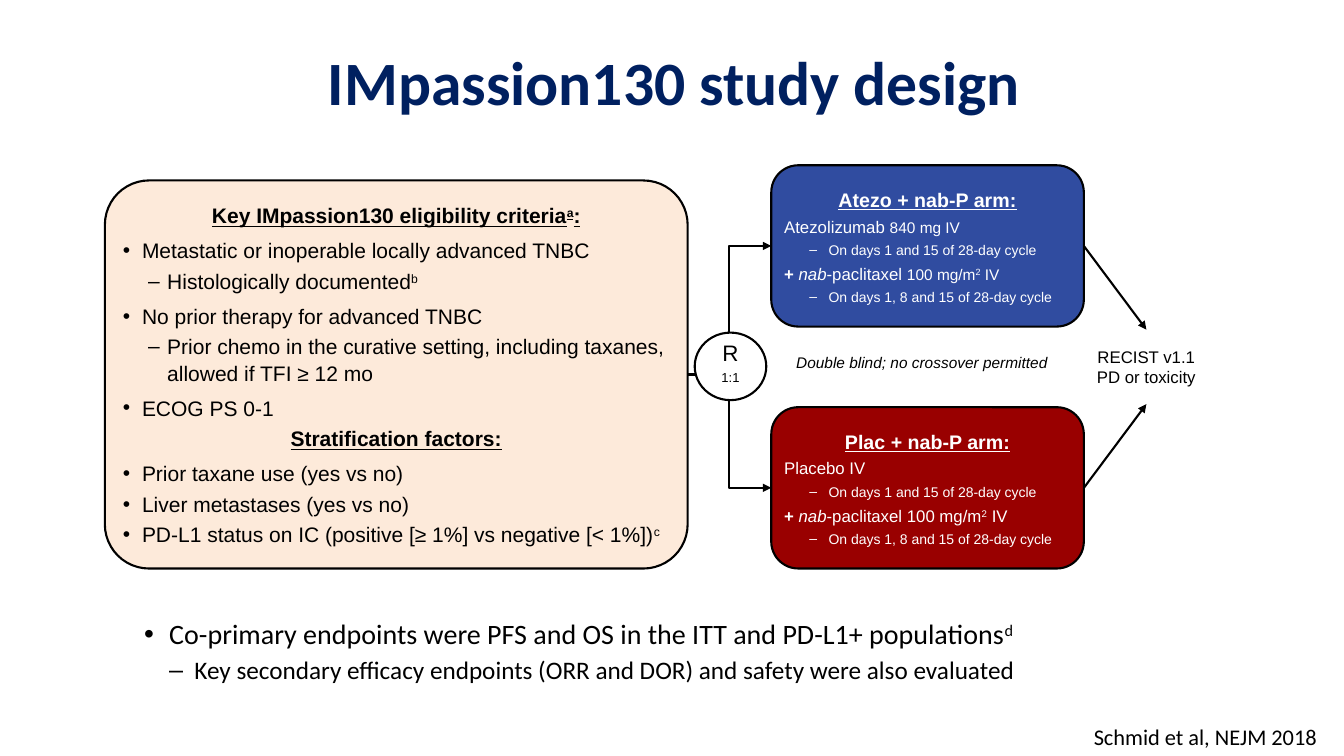
"""Builds the IMpassion130 study design slide."""
from lxml import etree
from pptx import Presentation
from pptx import util as u
from pptx.dml.color import RGBColor
from pptx.enum import shapes, text
from pptx.oxml.ns import qn

COLORS = {"black": "000000", "white": "FFFFFF", "navy": "002060",
          "peach": "FDEADA", "blue": "304CA0", "red": "990000"}
CENTER = text.PP_ALIGN.CENTER
MIDDLE = text.MSO_ANCHOR.MIDDLE
SHAPE = shapes.MSO_SHAPE


def span(words, **style):
    return words, style


def para(*spans, **layout):
    return spans, layout


def heading(*spans):
    return para(*spans, align=CENTER, before=3, after=3)


def bullet(*spans, indent=0.19, before=3):
    return para(*spans, mark="•", indent=(indent, -indent), before=before)


def dash(*spans, indent=(0.44, -0.19), after=3, mark="‒"):
    return para(*spans, mark=mark, indent=indent, before=3, after=after, level=1)


class StudySlide:
    def __init__(self, slide, line_width=1.5):
        self.slide = slide
        self.line_width = line_width

    def color(self, name):
        return RGBColor.from_string(COLORS[name])

    def put_text(self, shape, paragraphs, font="Arial", size=12, color="black",
                 anchor=text.MSO_ANCHOR.TOP, insets=None, wrap=True, spacing=None):
        frame = shape.text_frame
        frame.word_wrap = wrap
        frame.vertical_anchor = anchor
        if insets is not None:
            frame.margin_left = frame.margin_right = u.Inches(insets)
            frame.margin_top = frame.margin_bottom = u.Inches(insets)
        for i, (spans, layout) in enumerate(paragraphs):
            p = frame.paragraphs[0] if i == 0 else frame.add_paragraph()
            p.alignment = layout.get("align", text.PP_ALIGN.LEFT)
            p.level = layout.get("level", 0)
            p.space_before = u.Pt(layout.get("before", 0))
            p.space_after = u.Pt(layout.get("after", 0))
            if spacing:
                p.line_spacing = spacing
            if "mark" in layout:
                margin, first = layout["indent"]
                props = p._p.get_or_add_pPr()
                props.set("marL", str(u.Inches(margin)))
                props.set("indent", str(u.Inches(first)))
                etree.SubElement(props, qn("a:buFont"), typeface="Arial")
                etree.SubElement(props, qn("a:buChar"), char=layout["mark"])
            for words, style in spans:
                run = p.add_run()
                run.text = words
                run.font.name = font
                run.font.size = u.Pt(style.get("size", size))
                run.font.color.rgb = self.color(color)
                run.font.bold = style.get("bold", False)
                run.font.italic = style.get("italic", False)
                run.font.underline = style.get("underline", False)
                if style.get("sup"):
                    run.font._element.set("baseline", "30000")

    def textbox(self, place, paragraphs, **style):
        box = self.slide.shapes.add_textbox(*map(u.Inches, place))
        self.put_text(box, paragraphs, **style)

    def box(self, kind, place, paragraphs, fill=None, radius=None, insets=0.05, **style):
        shape = self.slide.shapes.add_shape(kind, *map(u.Inches, place))
        shape.shadow.inherit = False
        if radius:
            shape.adjustments[0] = radius
        if fill:
            shape.fill.solid()
            shape.fill.fore_color.rgb = self.color(fill)
            shape.line.color.rgb = self.color("black")
            shape.line.width = u.Pt(self.line_width)
        else:
            shape.fill.background()
            shape.line.fill.background()
        self.put_text(shape, paragraphs, anchor=MIDDLE, insets=insets, **style)
        return shape

    def arrow(self, kind, start, start_side, end, end_side):
        link = self.slide.shapes.add_connector(kind, 0, 0, 0, 0)
        link.begin_connect(start, start_side)
        link.end_connect(end, end_side)
        link.line.color.rgb = self.color("black")
        link.line.width = u.Pt(self.line_width)
        etree.SubElement(link.line._get_or_add_ln(), qn("a:tailEnd"), type="triangle")
        etree.SubElement(link._element.spPr, qn("a:effectLst"))


def arm(name, drug, dose):
    title = {"size": 14, "bold": True, "underline": True}
    return [
        heading(span(name, **title)),
        para(*drug),
        dash(span("On days 1 and 15 of 28-day cycle", size=10)),
        para(span("+ ", bold=True), span("nab", italic=True), span("-paclitaxel "),
             span("100 mg/m", size=dose), span("2", size=dose, sup=True),
             span(" IV", size=dose)),
        dash(span("On days 1, 8 and 15 of 28-day cycle", size=10)),
    ]


def main():
    deck = Presentation()
    deck.slide_width, deck.slide_height = u.Inches(13.33), u.Inches(7.5)
    study = StudySlide(deck.slides.add_slide(deck.slide_layouts[6]))

    study.textbox((2.06, 0.39, 9.26, 0.83),
                  [para(span("IMpassion130 study design", bold=True), align=CENTER)],
                  font="Calibri", size=44, color="navy", anchor=text.MSO_ANCHOR.BOTTOM)
    study.textbox((1.33, 6.07, 9.25, 1.05), [
        bullet(span("Co-primary endpoints were PFS and OS in the ITT and PD-L1+ populations"),
               span("d", sup=True), indent=0.25, before=12),
        dash(span("Key secondary efficacy endpoints (ORR and DOR) and safety were also evaluated",
                  size=18), indent=(0.5, -0.25), after=0, mark="–"),
    ], font="Calibri", size=20)

    strong = {"bold": True, "underline": True}
    criteria = study.box(SHAPE.ROUNDED_RECTANGLE, (1.04, 1.79, 5.78, 3.85), [
        heading(span("Key IMpassion130 eligibility criteria", **strong),
                span("a", sup=True, **strong), span(":", **strong)),
        bullet(span("Metastatic or inoperable locally advanced TNBC")),
        dash(span("Histologically documented"), span("b", sup=True)),
        bullet(span("No prior therapy for advanced TNBC")),
        dash(span("Prior chemo in the curative setting, including taxanes, "
                  "allowed if TFI ≥ 12 mo")),
        bullet(span("ECOG PS 0-1")),
        heading(span("Stratification factors:", **strong)),
        bullet(span("Prior taxane use (yes vs no)")),
        bullet(span("Liver metastases (yes vs no)")),
        bullet(span("PD-L1 status on IC (positive [≥ 1%] vs negative [< 1%])"),
               span("c", sup=True)),
    ], fill="peach", radius=0.114, size=15, spacing=1.05)

    outcome = study.box(SHAPE.ROUNDED_RECTANGLE, (10.77, 3.27, 1.2, 0.74),
                        [para(span("RECIST v1.1 PD or toxicity"), align=CENTER)])
    arms = [
        (1.64, "blue", 0, arm("Atezo + nab-P arm:",
                              [span("Atezolizumab "), span("840 mg IV", size=11)], 11)),
        (4.04, "red", 2, arm("Plac + nab-P arm:", [span("Placebo IV")], 12)),
    ]
    for top, fill, outcome_side, regimen in arms:
        treatment = study.box(SHAPE.ROUNDED_RECTANGLE, (7.65, top, 3.1, 1.6), regimen,
                              fill=fill, radius=0.167, color="white", spacing=1.05)
        study.arrow(shapes.MSO_CONNECTOR.ELBOW, criteria, 3, treatment, 1)
        study.arrow(shapes.MSO_CONNECTOR.STRAIGHT, treatment, 3, outcome, outcome_side)

    study.box(SHAPE.OVAL, (6.89, 3.3, 0.71, 0.67),
              [para(span("R"), align=CENTER), para(span("1:1", sup=True), align=CENTER)],
              fill="white", insets=0, size=16)
    study.textbox((7.41, 3.45, 3.47, 0.29),
                  [para(span("Double blind; no crossover permitted", italic=True),
                        align=CENTER)], size=11)
    study.textbox((10.75, 7.13, 2.44, 0.37), [para(span("Schmid et al, NEJM 2018"))],
                  font="Calibri", size=16, wrap=False)
    deck.save("out.pptx")


if __name__ == "__main__":
    main()
